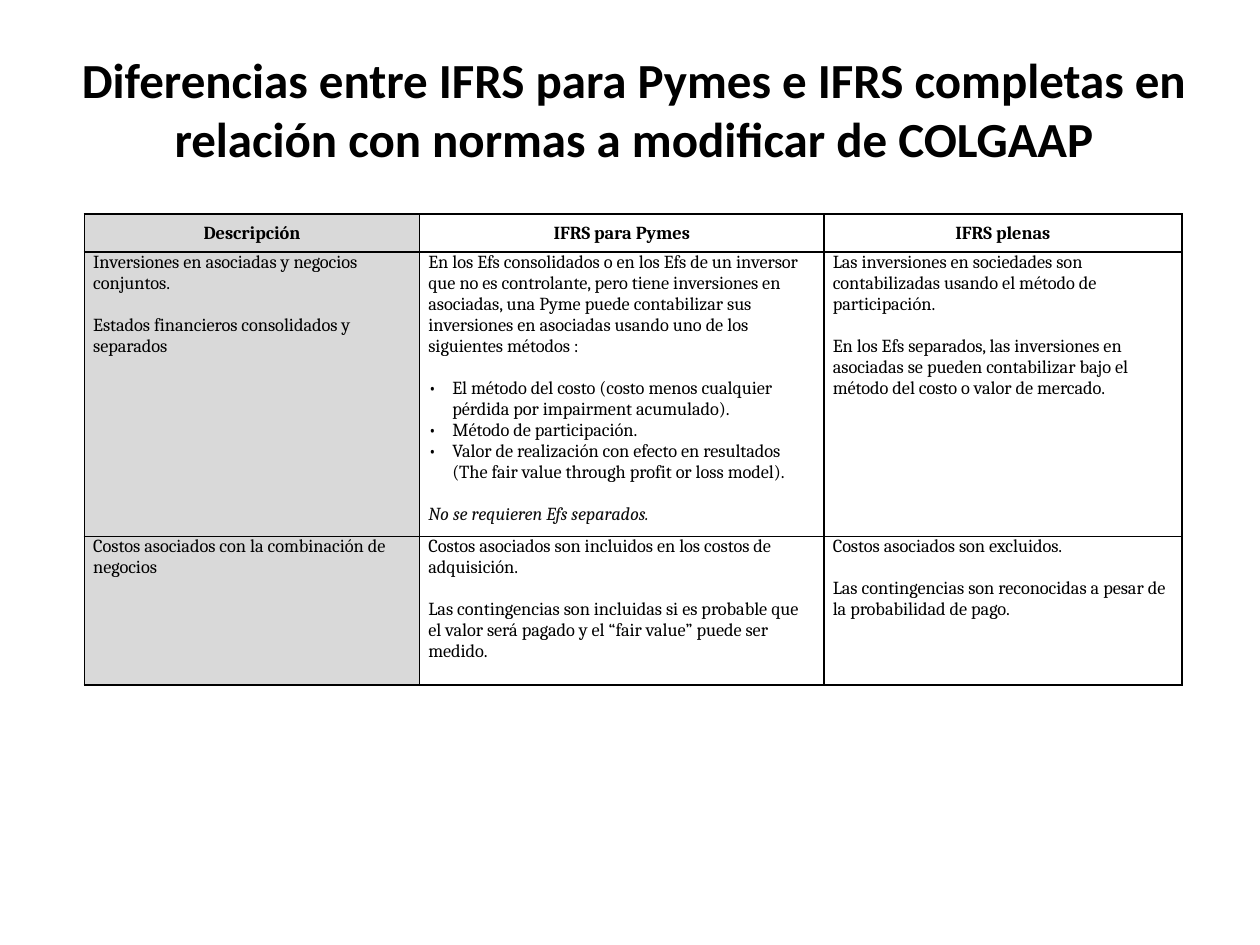
from lxml import etree
from pptx import Presentation
from pptx.dml.color import RGBColor
from pptx.enum.text import MSO_ANCHOR, PP_ALIGN
from pptx.oxml.ns import qn
from pptx.util import Inches, Pt

CENTER, LEFT = PP_ALIGN.CENTER, PP_ALIGN.LEFT
MIDDLE, TOP = MSO_ANCHOR.MIDDLE, MSO_ANCHOR.TOP

# The slide is a grid of 100 columns by 75 rows of square units
UNIT = Inches(0.1)
SLIDE_COLUMNS, SLIDE_ROWS = 100, 75

BLACK, WHITE, GRAY, DARK = "000000", "FFFFFF", "D9D9D9", "0D0D0D"
LINE_GAP = Pt(12)  # one line of table text

TITLE = ("Diferencias entre IFRS para Pymes e IFRS completas en "
         "relación con normas a modificar de COLGAAP")
TITLE_BOX = (2.8, 3.6, 95, 10)
TABLE_BOX = (6.7, 17, 87.1, 36.5)
COLUMN_WIDTHS = (26.6, 32.1, 28.4)
ROW_HEIGHTS = (3, 21.7, 11.8)

# Paragraph kinds: "first" and "bullet" follow on directly,
# "block" and "note" stand one line below
HEADERS = ("Descripción", "IFRS para Pymes", "IFRS plenas")
BODY = [
    [
        [("first", "Inversiones en asociadas y negocios conjuntos."),
         ("block", "Estados financieros consolidados y separados")],
        [("first", "En los Efs consolidados o en los Efs de un inversor que no es "
                   "controlante, pero tiene inversiones en asociadas, una Pyme puede "
                   "contabilizar sus inversiones en asociadas usando uno de los "
                   "siguientes métodos :"),
         ("block bullet", "El método del costo (costo menos cualquier pérdida por "
                          "impairment acumulado)."),
         ("bullet", "Método de participación."),
         ("bullet", "Valor de realización con efecto en resultados "
                    "(The fair value through profit or loss model)."),
         ("block note", "No se requieren Efs separados.")],
        [("first", "Las inversiones en sociedades son contabilizadas usando el "
                   "método de participación."),
         ("block", "En los Efs separados, las inversiones en asociadas se pueden "
                   "contabilizar bajo el método del costo o valor de mercado.")],
    ],
    [
        [("first", "Costos asociados con la combinación de negocios")],
        [("first", "Costos asociados son incluidos en los costos de adquisición."),
         ("block", "Las contingencias son incluidas si es probable que el valor será "
                   "pagado y el “fair value” puede ser medido.")],
        [("first", "Costos asociados son excluidos."),
         ("block", "Las contingencias son reconocidas a pesar de la probabilidad "
                   "de pago.")],
    ],
]


def color(hex_string):
    return RGBColor.from_string(hex_string)


def grid(*units):
    return [round(UNIT * value) for value in units]


def format_font(font, name, size, hex_string, bold=False, italic=False):
    font.name, font.size = name, Pt(size)
    font.bold, font.italic = bold, italic
    font.color.rgb = color(hex_string)


def add_bullet(paragraph):
    properties = paragraph._p.get_or_add_pPr()
    properties.set("marL", str(Inches(0.19)))
    properties.set("indent", str(-Inches(0.19)))
    etree.SubElement(properties, qn("a:buFont")).set("typeface", "Cambria")
    etree.SubElement(properties, qn("a:buChar")).set("char", "•")


def add_borders(cell):
    properties = cell._tc.get_or_add_tcPr()
    for index, side in enumerate(("lnL", "lnR", "lnT", "lnB")):
        line = etree.Element(qn("a:" + side), w=str(Pt(1)))
        fill = etree.SubElement(line, qn("a:solidFill"))
        etree.SubElement(fill, qn("a:srgbClr")).set("val", BLACK)
        properties.insert(index, line)


def fill_cell(cell, paragraphs, background, header=False):
    cell.margin_left = cell.margin_right = Inches(0.07)
    cell.margin_top = cell.margin_bottom = 0
    cell.vertical_anchor = MIDDLE if header else TOP
    cell.fill.solid()
    cell.fill.fore_color.rgb = color(background)
    add_borders(cell)
    cell.text_frame.text = "\n".join(text for _, text in paragraphs)
    for (kind, _), paragraph in zip(paragraphs, cell.text_frame.paragraphs):
        paragraph.alignment = CENTER if header else LEFT
        if "block" in kind:
            paragraph.space_before = LINE_GAP
        if "bullet" in kind:
            add_bullet(paragraph)
        note = "note" in kind
        format_font(paragraph.runs[0].font, "Cambria", 10.5,
                    DARK if note else BLACK, bold=header, italic=note)


def add_title(slide, box):
    shape = slide.shapes.add_textbox(*grid(*box))
    shape.fill.solid()
    shape.fill.fore_color.rgb = color(WHITE)
    frame = shape.text_frame
    frame.word_wrap = True
    frame.vertical_anchor = MIDDLE
    frame.text = TITLE
    paragraph = frame.paragraphs[0]
    paragraph.alignment = CENTER
    format_font(paragraph.runs[0].font, "Calibri", 28, BLACK, bold=True)


def add_comparison_table(slide, box):
    rows = [[[("first", header)] for header in HEADERS]] + BODY
    table = slide.shapes.add_table(len(rows), len(HEADERS), *grid(*box)).table
    table.first_row = table.horz_banding = False
    for column, width in zip(table.columns, grid(*COLUMN_WIDTHS)):
        column.width = width
    for row, height in zip(table.rows, grid(*ROW_HEIGHTS)):
        row.height = height
    for row_index, row in enumerate(rows):
        for column_index, paragraphs in enumerate(row):
            fill_cell(table.cell(row_index, column_index), paragraphs,
                      WHITE if column_index else GRAY, header=row_index == 0)


def main():
    presentation = Presentation()
    presentation.slide_width, presentation.slide_height = grid(SLIDE_COLUMNS, SLIDE_ROWS)
    slide = presentation.slides.add_slide(presentation.slide_layouts[6])
    add_title(slide, TITLE_BOX)
    add_comparison_table(slide, TABLE_BOX)
    presentation.save("out.pptx")


if __name__ == "__main__":
    main()
